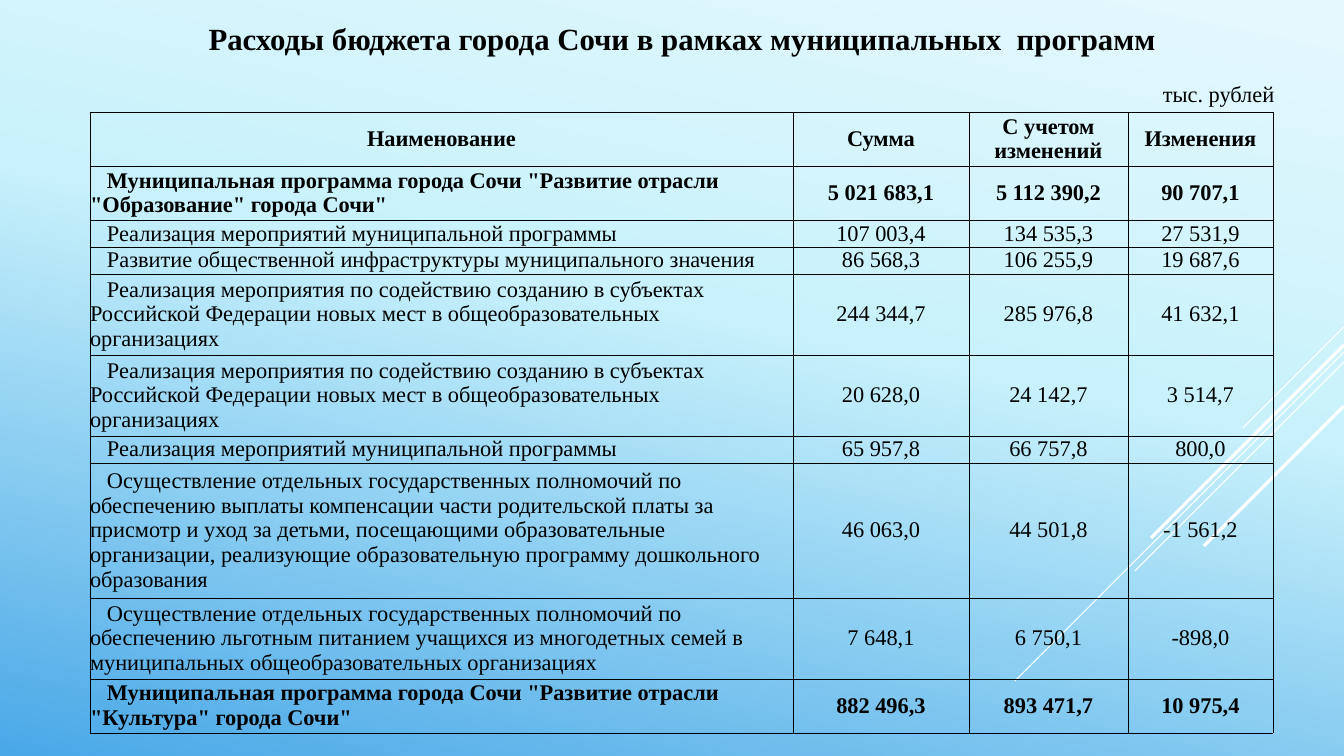
"""Slide with the municipal programme spending of the city of Sochi."""
import copy

import lxml.etree
import pptx
import pptx.dml.color
import pptx.enum.shapes
import pptx.enum.text
import pptx.oxml.ns
import pptx.util

RGBColor = pptx.dml.color.RGBColor
Align = pptx.enum.text.PP_ALIGN
qn = pptx.oxml.ns.qn

BLACK = RGBColor(0x00, 0x00, 0x00)
WHITE = RGBColor(0xFF, 0xFF, 0xFF)
SKY_STOPS = [
    (0.02, RGBColor(0xE4, 0xF8, 0xFD)),
    (0.43, RGBColor(0xC8, 0xF1, 0xFB)),
    (1.0, RGBColor(0x4A, 0xA8, 0xE7)),
]
FONT = "Times New Roman"
PX_PER_INCH = 100.8
SLIDE_WIDTH, SLIDE_HEIGHT = 1344, 756
TEXT_LINE = 27
FIRST_LINE_INDENT = 17
COLUMN_WIDTHS = [703, 176, 159, 145]

RAYS = [(327, 101, 0.75), (352, 329, 0.75), (362, 209, 0.75),
        (345, 193, 2.25), (406, 140, 2.25)]

NEW_PLACES = ("Реализация мероприятия по содействию созданию в субъектах Российской "
              "Федерации новых мест в общеобразовательных организациях")
MEASURES = "Реализация мероприятий муниципальной программы"
PROGRAMME = 'Муниципальная программа города Сочи "Развитие отрасли "{}" города Сочи"'

HEADER = ["Наименование", "Сумма", "С учетом изменений", "Изменения"]
BUDGET_ROWS = [
    (2, True, HEADER),
    (2, True, [PROGRAMME.format("Образование"), "5 021 683,1", "5 112 390,2", "90 707,1"]),
    (1, False, [MEASURES, "107 003,4", "134 535,3", "27 531,9"]),
    (1, False, ["Развитие общественной инфраструктуры муниципального значения",
                "86 568,3", "106 255,9", "19 687,6"]),
    (3, False, [NEW_PLACES, "244 344,7", "285 976,8", "41 632,1"]),
    (3, False, [NEW_PLACES, "20 628,0", "24 142,7", "3 514,7"]),
    (1, False, [MEASURES, "65 957,8", "66 757,8", "800,0"]),
    (5, False, ["Осуществление отдельных государственных полномочий по обеспечению "
                "выплаты компенсации части родительской платы за присмотр и уход за "
                "детьми, посещающими образовательные организации, реализующие "
                "образовательную программу дошкольного образования",
                "46 063,0", "44 501,8", "-1 561,2"]),
    (3, False, ["Осуществление отдельных государственных полномочий по обеспечению "
                "льготным питанием учащихся из многодетных семей в муниципальных "
                "общеобразовательных организациях", "7 648,1", "6 750,1", "-898,0"]),
    (2, True, [PROGRAMME.format("Культура"), "882 496,3", "893 471,7", "10 975,4"]),
]


def px(length):
    """Turn a length in px into EMU."""
    return pptx.util.Emu(round(length * 914400 / PX_PER_INCH))


def apply_format(target, values):
    """Set each attribute named in values on the target."""
    for name, value in values.items():
        setattr(target, name, value)


def write_text(text_frame, text, size, bold, alignment):
    """Write one black paragraph and return it."""
    paragraph = text_frame.paragraphs[0]
    paragraph.alignment = alignment
    run = paragraph.add_run()
    run.text = text
    apply_format(run.font, {"name": FONT, "size": pptx.util.Pt(size), "bold": bold})
    run.font.color.rgb = BLACK
    return paragraph


def paint_background(slide):
    """Fill the slide with the three-stop sky gradient."""
    fill = slide.background.fill
    fill.gradient()
    fill.gradient_angle = 258
    stop_list = slide.element.find(".//" + qn("a:gsLst"))
    stop_list.append(copy.deepcopy(stop_list[-1]))
    for stop, (position, color) in zip(fill.gradient_stops, SKY_STOPS):
        stop.position = position
        stop.color.rgb = color


def draw_rays(slide, right):
    """Draw the diagonal rays that descend leftwards from the right edge."""
    for top, reach, width in RAYS:
        ray = slide.shapes.add_connector(
            pptx.enum.shapes.MSO_CONNECTOR.STRAIGHT,
            px(right), px(top), px(right - reach), px(top + reach))
        ray.line.color.rgb = WHITE
        ray.line.width = pptx.util.Pt(width)
        lxml.etree.SubElement(ray.element.spPr, qn("a:effectLst"))


def add_label(slide, box, text, size, bold, alignment):
    """Place a line of text in the given box."""
    label = slide.shapes.add_textbox(*map(px, box))
    label.text_frame.word_wrap = True
    write_text(label.text_frame, text, size, bold, alignment)


def outline_cell(cell):
    """Give all four sides of a cell a thin black border."""
    properties = cell._tc.get_or_add_tcPr()
    for index, side in enumerate(("lnL", "lnR", "lnT", "lnB")):
        border = lxml.etree.Element(qn("a:" + side), w=str(pptx.util.Pt(0.5)))
        fill = lxml.etree.SubElement(border, qn("a:solidFill"))
        lxml.etree.SubElement(fill, qn("a:srgbClr"), val=str(BLACK))
        properties.insert(index, border)


def fill_cell(cell, text, bold, is_name):
    """Format one table cell; programme names are left-aligned and indented."""
    apply_format(cell, {
        "margin_left": 0, "margin_right": 0, "margin_top": 0, "margin_bottom": 0,
        "vertical_anchor": pptx.enum.text.MSO_ANCHOR.MIDDLE})
    cell.fill.background()
    outline_cell(cell)
    alignment = Align.LEFT if is_name else Align.CENTER
    paragraph = write_text(cell.text_frame, text, 16, bold, alignment)
    if is_name:
        paragraph_properties = paragraph._p.get_or_add_pPr()
        paragraph_properties.set("marL", "0")
        paragraph_properties.set("indent", str(px(FIRST_LINE_INDENT)))


def add_budget_table(slide, left, top):
    """Place the budget table with its top left corner at the given point."""
    height = TEXT_LINE * sum(lines for lines, _, _ in BUDGET_ROWS)
    frame = slide.shapes.add_table(
        len(BUDGET_ROWS), len(COLUMN_WIDTHS),
        px(left), px(top), px(sum(COLUMN_WIDTHS)), px(height))
    table = frame.table
    apply_format(table, {"first_row": False, "horz_banding": False})
    for column, width in zip(table.columns, COLUMN_WIDTHS):
        column.width = px(width)
    for row, (lines, bold, texts) in zip(table.rows, BUDGET_ROWS):
        row.height = px(lines * TEXT_LINE)
        for index, (cell, text) in enumerate(zip(row.cells, texts)):
            fill_cell(cell, text, bold, index == 0 and texts is not HEADER)


def build_budget_slide(presentation):
    """Add the slide with its background, headings and table."""
    slide = presentation.slides.add_slide(presentation.slide_layouts[6])
    paint_background(slide)
    draw_rays(slide, SLIDE_WIDTH)
    add_label(slide, (197, 15, 970, 47),
              "Расходы бюджета города Сочи в рамках муниципальных  программ",
              22, True, Align.CENTER)
    add_label(slide, (1153, 75, 152, 37), "тыс. рублей", 16, False, Align.LEFT)
    add_budget_table(slide, 90, 112)


def main():
    """Build and save the presentation."""
    presentation = pptx.Presentation()
    apply_format(presentation, {"slide_width": px(SLIDE_WIDTH),
                                "slide_height": px(SLIDE_HEIGHT)})
    build_budget_slide(presentation)
    presentation.save("out.pptx")


if __name__ == "__main__":
    main()
